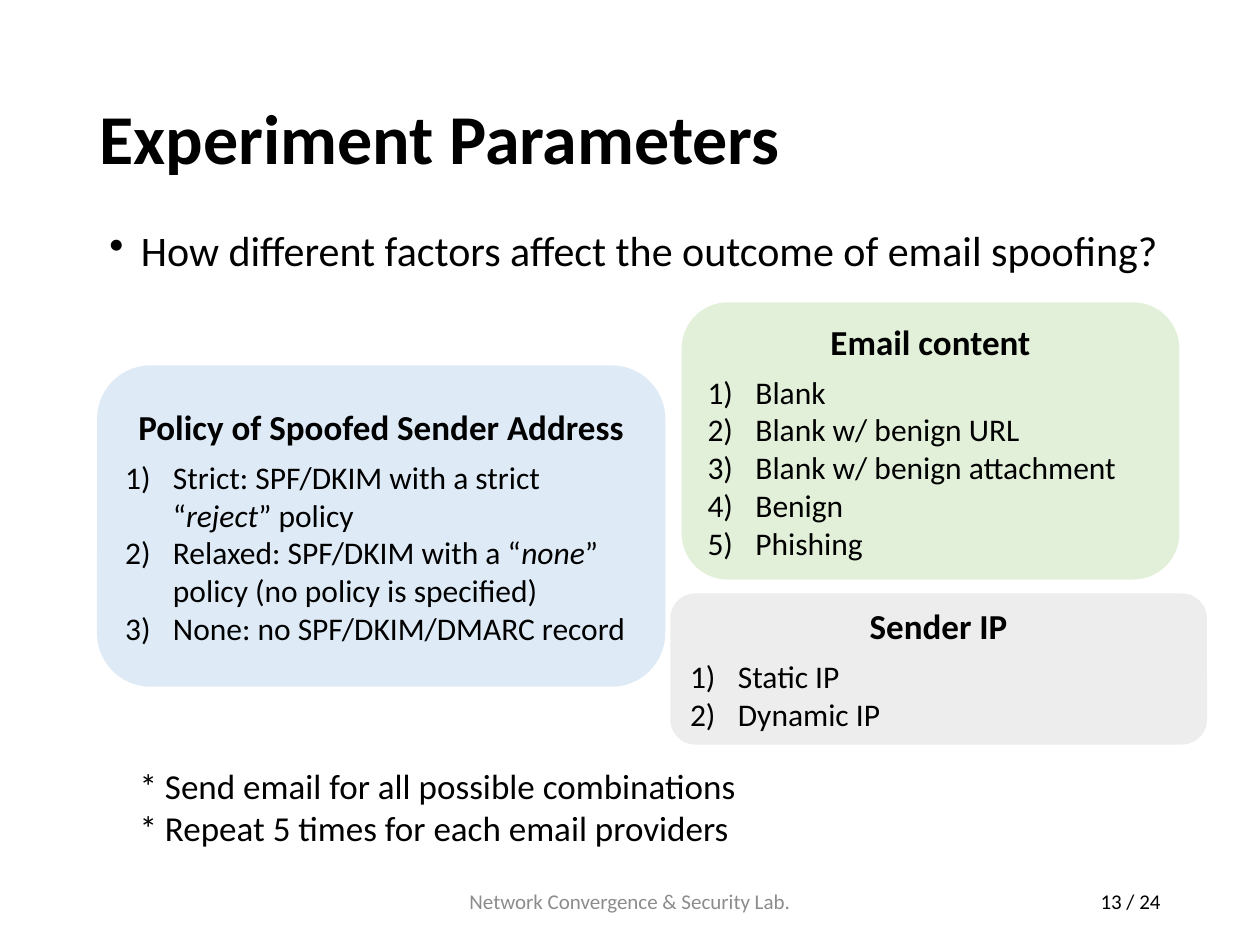
"""Build the slide on experiment parameters for email spoofing."""
from dataclasses import dataclass

from lxml.etree import SubElement
from pptx import Presentation
from pptx.dml.color import RGBColor
from pptx.enum.shapes import MSO_SHAPE
from pptx.enum.text import MSO_ANCHOR as Anchor, PP_ALIGN as Align
from pptx.oxml.ns import qn
from pptx.util import Inches, Pt

BLACK = RGBColor(0x00, 0x00, 0x00)
GRAY = RGBColor(0x8C, 0x8C, 0x8C)
PALE_BLUE = RGBColor(0xDE, 0xEB, 0xF7)
PALE_GREEN = RGBColor(0xE2, 0xF0, 0xD9)
PALE_GRAY = RGBColor(0xED, 0xED, 0xED)
FONT = "Calibri"
ITALIC_MARK = "_"


@dataclass(frozen=True)
class Box:
    left: float
    top: float
    width: float
    height: float

    def lengths(self) -> tuple:
        return tuple(Inches(n) for n in (self.left, self.top, self.width, self.height))


@dataclass(frozen=True)
class Label:
    box: Box
    lines: tuple[str, ...]
    size: int
    color: RGBColor = BLACK
    bold: bool = False
    align: Align = Align.LEFT
    anchor: Anchor = Anchor.MIDDLE
    line_spacing: float = 1.0
    space_before: int = 0
    bullet: bool = False


@dataclass(frozen=True)
class Card:
    box: Box
    fill: RGBColor
    heading: str
    options: tuple[str, ...]


LABELS = (
    Label(Box(0.69, 0.4, 8.62, 1.45), ("Experiment Parameters",), 40,
          bold=True, line_spacing=0.9),
    Label(Box(0.77, 1.78, 8.62, 0.6),
          ("How different factors affect the outcome of email spoofing?",), 24,
          anchor=Anchor.TOP, line_spacing=0.9, space_before=10, bullet=True),
    Label(Box(1.01, 6.02, 8.36, 0.77),
          ("* Send email for all possible combinations",
           "* Repeat 5 times for each email providers"), 20, anchor=Anchor.TOP),
    Label(Box(3.31, 6.95, 3.38, 0.4), ("Network Convergence & Security Lab.",), 12,
          color=GRAY, align=Align.CENTER),
    Label(Box(7.06, 6.95, 2.25, 0.4), ("13 / 24",), 12, align=Align.RIGHT),
)

CARDS = (
    Card(Box(0.77, 2.9, 4.51, 2.55), PALE_BLUE, "Policy of Spoofed Sender Address",
         ("Strict: SPF/DKIM with a strict “_reject_” policy",
          "Relaxed: SPF/DKIM with a “_none_” policy (no policy is specified)",
          "None: no SPF/DKIM/DMARC record")),
    Card(Box(5.41, 2.4, 3.95, 2.2), PALE_GREEN, "Email content",
         ("Blank", "Blank w/ benign URL", "Blank w/ benign attachment",
          "Benign", "Phishing")),
    Card(Box(5.32, 4.71, 4.26, 1.2), PALE_GRAY, "Sender IP",
         ("Static IP", "Dynamic IP")),
)


def set_bullet(paragraph, indent: float, tag: str, **attributes: str) -> None:
    properties = paragraph._p.get_or_add_pPr()
    properties.set("marL", str(Inches(indent)))
    properties.set("indent", str(-Inches(indent)))
    SubElement(properties, qn(tag), attributes)


def set_font(paragraph, size: int, color: RGBColor = BLACK, bold: bool = False) -> None:
    font = paragraph.font
    font.name, font.size, font.bold = FONT, Pt(size), bold
    font.color.rgb = color


def add_paragraph(frame, is_first: bool):
    return frame.paragraphs[0] if is_first else frame.add_paragraph()


def add_label(slide, label: Label) -> None:
    frame = slide.shapes.add_textbox(*label.box.lengths()).text_frame
    frame.word_wrap = True
    frame.vertical_anchor = label.anchor
    for index, line in enumerate(label.lines):
        paragraph = add_paragraph(frame, index == 0)
        paragraph.text = line
        paragraph.alignment = label.align
        paragraph.line_spacing = label.line_spacing
        paragraph.space_before = Pt(label.space_before)
        if label.bullet:
            set_bullet(paragraph, 0.25, "a:buChar", char="•")
        set_font(paragraph, label.size, label.color, label.bold)


def add_card(slide, card: Card) -> None:
    shape = slide.shapes.add_shape(MSO_SHAPE.ROUNDED_RECTANGLE, *card.box.lengths())
    shape.shadow.inherit = False
    shape.fill.solid()
    shape.fill.fore_color.rgb = card.fill
    shape.line.fill.background()
    frame = shape.text_frame
    frame.word_wrap = True
    frame.vertical_anchor = Anchor.MIDDLE
    heading = add_paragraph(frame, True)
    heading.text = card.heading
    heading.alignment = Align.CENTER
    heading.space_after = Pt(6)
    set_font(heading, 20, bold=True)
    for option in card.options:
        paragraph = add_paragraph(frame, False)
        paragraph.alignment = Align.LEFT
        set_bullet(paragraph, 0.38, "a:buAutoNum", type="arabicParenR")
        set_font(paragraph, 18)
        for index, text in enumerate(option.split(ITALIC_MARK)):
            run = paragraph.add_run()
            run.text = text
            if index % 2:
                run.font.italic = True


def main() -> None:
    presentation = Presentation()
    presentation.slide_width, presentation.slide_height = Inches(10), Inches(7.5)
    slide = presentation.slides.add_slide(presentation.slide_layouts[6])
    for card in CARDS:
        add_card(slide, card)
    for label in LABELS:
        add_label(slide, label)
    presentation.save("out.pptx")


if __name__ == "__main__":
    main()
